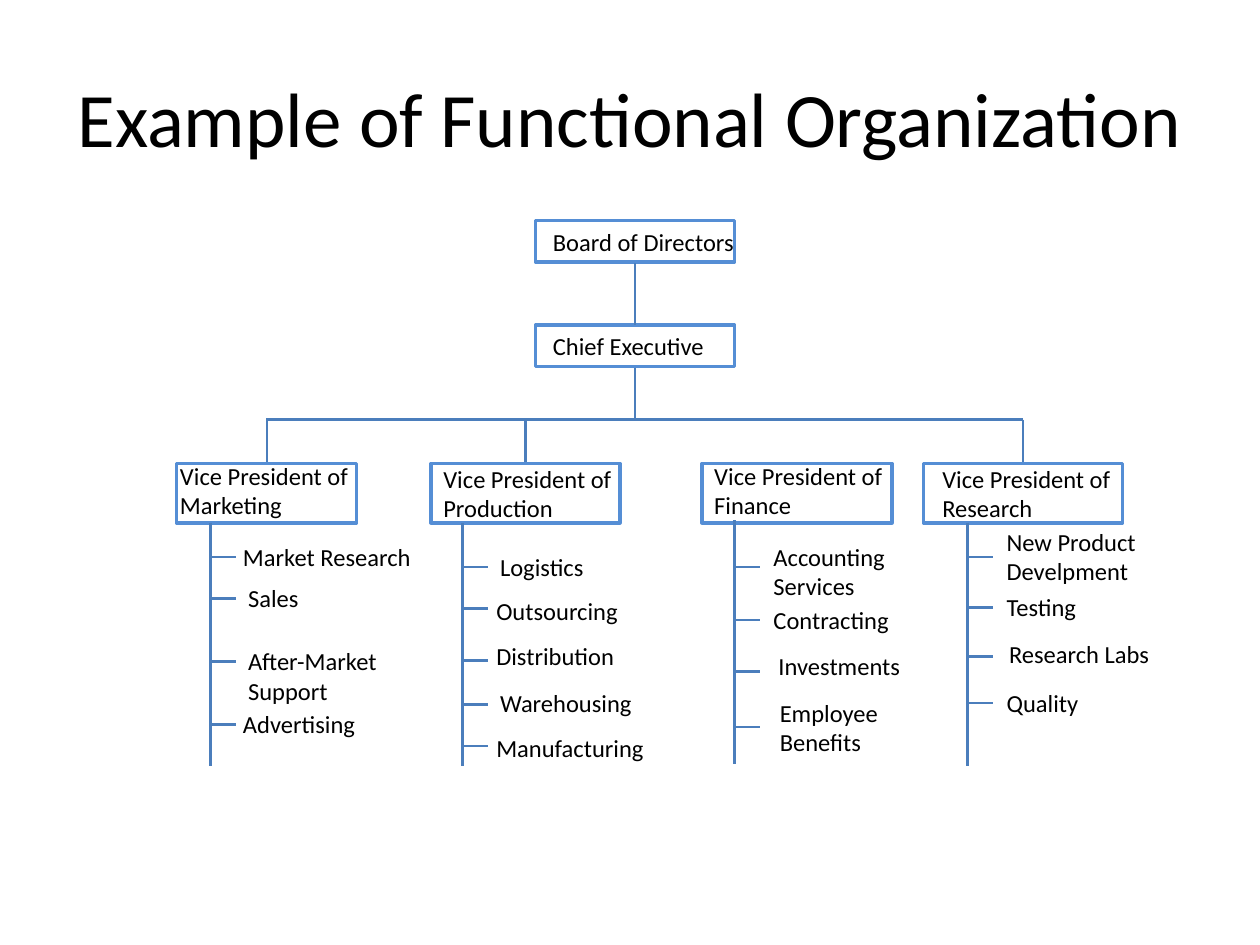
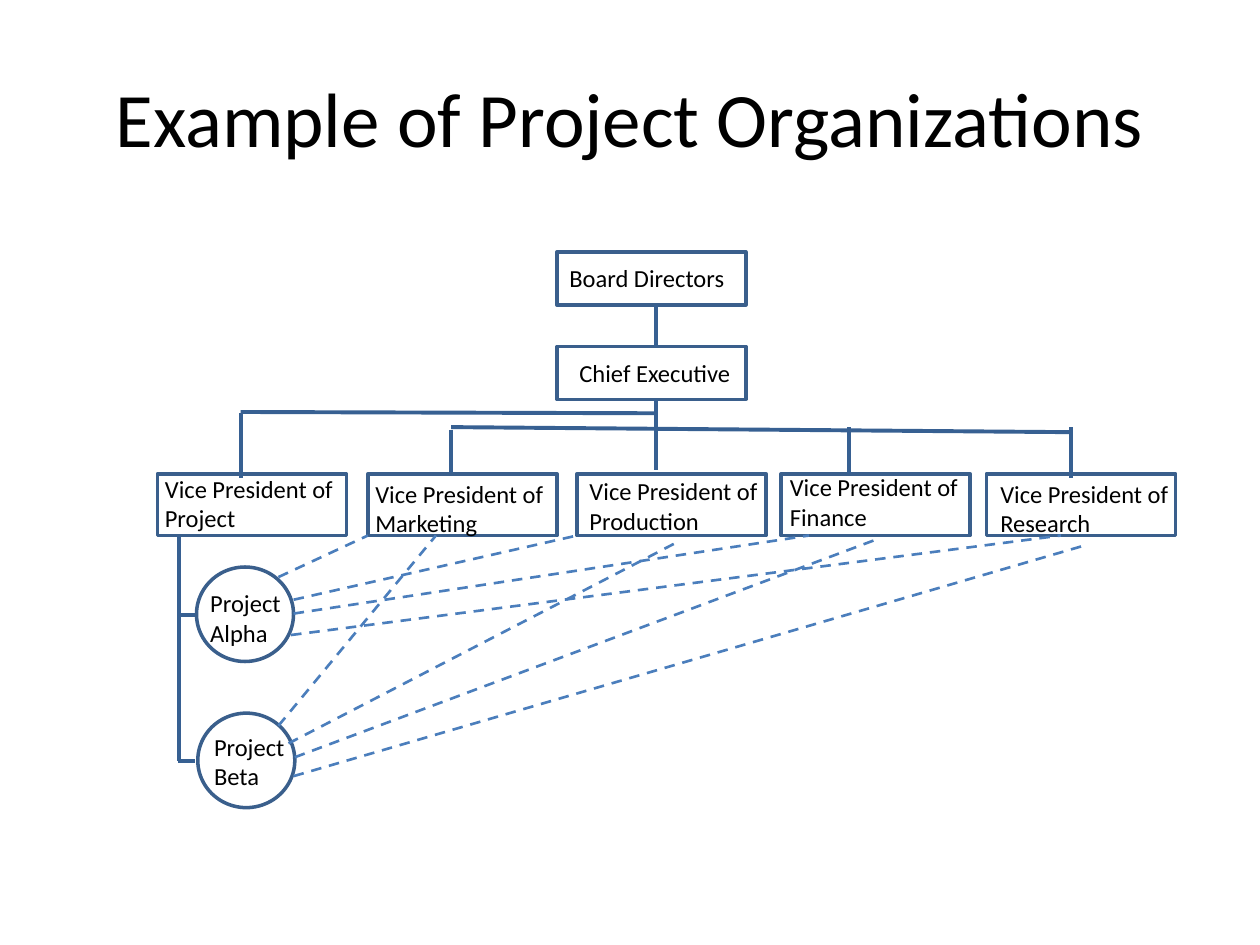
"""Build two organization chart slides."""
from dataclasses import dataclass

from lxml import etree
from pptx import Presentation
from pptx import util as u
from pptx.dml.color import RGBColor
from pptx.enum import dml, shapes, text
from pptx.oxml import ns


@dataclass(frozen=True)
class Theme:
    font: str = "Calibri"
    ink: str = "000000"
    sky: str = "558ED5"
    steel: str = "4B7EBC"
    navy: str = "3A5F8C"
    deep: str = "376092"
    head: int = 44
    body: int = 14
    edge: float = 2
    thin: float = 1.5
    bold: float = 2.25


class Deck:
    def __init__(self, theme):
        self.theme = theme
        self.show = Presentation()
        self.format(self.show, slide_width=u.Inches(10), slide_height=u.Inches(7.5))
        self.slide = None

    def format(self, item, **values):
        for name, value in values.items():
            setattr(item, name, value)

    def page(self, title):
        self.slide = self.show.slides.add_slide(self.show.slide_layouts[6])
        self.label(0.5, 0.3, title, 9, 1.25, self.theme.head,
                   text.PP_ALIGN.CENTER, text.MSO_ANCHOR.MIDDLE)

    def label(self, x, y, words, width=1.58, height=None, size=None,
              align=text.PP_ALIGN.LEFT, anchor=text.MSO_ANCHOR.TOP):
        height = height or (0.57 if "\n" in words else 0.34)
        box = self.slide.shapes.add_textbox(*map(u.Inches, (x, y, width, height)))
        frame = box.text_frame
        self.format(frame, word_wrap=True, vertical_anchor=anchor, text=words)
        for para in frame.paragraphs:
            para.alignment = align
            self.format(para.font, name=self.theme.font,
                        size=u.Pt(size or self.theme.body))
            para.font.color.rgb = RGBColor.from_string(self.theme.ink)

    def stroke(self, line, color, width):
        line.color.rgb = RGBColor.from_string(color)
        line.width = u.Pt(width)

    def box(self, x, y, width, height, color, kind=shapes.MSO_SHAPE.RECTANGLE):
        item = self.slide.shapes.add_shape(kind, *map(u.Inches, (x, y, width, height)))
        item.shadow.inherit = False
        item.fill.background()
        self.stroke(item.line, color, self.theme.edge)

    def line(self, x1, y1, x2, y2, color=None, width=None, dash=False):
        item = self.slide.shapes.add_connector(
            shapes.MSO_CONNECTOR.STRAIGHT, *map(u.Inches, (x1, y1, x2, y2)))
        self.stroke(item.line, color or self.theme.steel, width or self.theme.thin)
        if dash:
            item.line.dash_style = dml.MSO_LINE.DASH
        etree.SubElement(item._element.spPr, ns.qn("a:effectLst"))

    def branch(self, box, title, stem, ticks, leaves):
        left, width = box
        x, top, end = stem
        self.box(left, 3.68, width, 0.47, self.theme.sky)
        self.label(*title, height=0.57)
        self.line(x, top, x, end)
        for y in ticks:
            self.line(x, y, x + 0.2, y)
        for leaf in leaves:
            self.label(*leaf)


BRANCHES = [
    ((1.4, 1.43), (1.33, 3.61, "Vice President of Marketing"), (1.67, 4.15, 6.08),
     (4.42, 4.75, 5.25, 5.75),
     [(1.83, 4.25, "Market Research"), (1.87, 4.58, "Sales"),
      (1.87, 5.08, "After-Market\nSupport"), (1.83, 5.58, "Advertising")]),
    ((3.42, 1.5), (3.42, 3.63, "Vice President of Production"), (3.67, 4.15, 6.08),
     (4.5, 4.83, 5.24, 5.59, 5.92),
     [(3.87, 4.33, "Logistics"), (3.84, 4.68, "Outsourcing"),
      (3.84, 5.04, "Distribution"), (3.87, 5.41, "Warehousing"),
      (3.84, 5.77, "Manufacturing")]),
    ((5.57, 1.51), (5.57, 3.61, "Vice President of Finance"), (5.83, 4.13, 6.06),
     (4.5, 4.92, 5.33, 5.77),
     [(6.04, 4.25, "Accounting\nServices"), (6.04, 4.75, "Contracting"),
      (6.08, 5.12, "Investments"), (6.09, 5.49, "Employee\nBenefits")]),
    ((7.33, 1.58), (7.38, 3.63, "Vice President of Research"), (7.68, 4.15, 6.08),
     (4.42, 4.82, 5.21, 5.58),
     [(7.89, 4.13, "New Product\nDevelpment"), (7.89, 4.65, "Testing"),
      (7.91, 5.02, "Research Labs"), (7.89, 5.41, "Quality")]),
]

CHIEFS = [
    (1.25, 1.21, 3.71, "Project"), (2.92, 2.88, 3.75, "Marketing"),
    (4.58, 4.58, 3.73, "Production"), (6.2, 6.17, 3.7, "Finance"),
    (7.83, 7.84, 3.75, "Research"),
]

TEAMS = [
    (1.56, 4.5, 1.57, 4.62, "Project\nAlpha", 4.88,
     [(2.21, 4.58, 2.92, 4.25), (2.33, 4.76, 4.58, 4.25),
      (2.33, 4.87, 6.42, 4.25), (2.31, 5.04, 8.42, 4.25)]),
    (1.57, 5.66, 1.6, 5.76, "Project\nBeta", 6.04,
     [(2.21, 5.76, 3.46, 4.25), (2.29, 5.9, 5.38, 4.3),
      (2.34, 6.01, 6.96, 4.28), (2.33, 6.16, 8.64, 4.32)]),
]

TREE = [
    (1.42, 4.25, 1.42, 6.04), (5.21, 2.42, 5.21, 2.75), (5.21, 3.17, 5.21, 3.73),
    (1.91, 3.27, 5.21, 3.28), (1.91, 3.28, 1.91, 3.79), (3.58, 3.39, 8.5, 3.43),
    (3.58, 3.41, 3.58, 3.75), (6.74, 3.39, 6.74, 3.76), (8.5, 3.39, 8.5, 3.79),
]


def draw_functions(deck):
    deck.page("Example of Functional Organization")
    for y, words, width in ((1.75, "Board of Directors", 1.67),
                            (2.58, "Chief Executive", 1.5)):
        deck.box(4.25, y, 1.58, 0.33, deck.theme.sky)
        deck.label(4.29, y, words, width)
    for x, top, end in ((5.04, 2.09, 2.58), (5.04, 2.92, 3.32), (2.12, 3.32, 3.67),
                        (4.17, 3.33, 3.68), (8.12, 3.33, 3.68)):
        deck.line(x, top, x, end)
    deck.line(2.12, 3.33, 8.12, 3.33)
    for branch in BRANCHES:
        deck.branch(*branch)


def draw_projects(deck):
    theme = deck.theme
    deck.page("Example of Project Organizations")
    for y, x, words in ((2, 4.42, "Board Directors"), (2.75, 4.5, "Chief Executive")):
        deck.box(4.42, y, 1.5, 0.42, theme.navy)
        deck.label(x, y + 0.04, words)
    for left, x, y, field in CHIEFS:
        deck.box(left, 3.76, 1.5, 0.49, theme.navy)
        deck.label(x, y, f"Vice President of\n{field}")
    for ends in TREE:
        deck.line(*ends, theme.deep, theme.bold)
    for left, top, x, y, words, tick, links in TEAMS:
        deck.box(left, top, 0.77, 0.75, theme.navy, shapes.MSO_SHAPE.OVAL)
        deck.label(x, y, words, 0.79)
        deck.line(1.41, tick, 1.55, tick, theme.deep, theme.bold)
        for link in links:
            deck.line(*link, dash=True)


def main():
    deck = Deck(Theme())
    draw_functions(deck)
    draw_projects(deck)
    deck.show.save("out.pptx")


if __name__ == "__main__":
    main()
